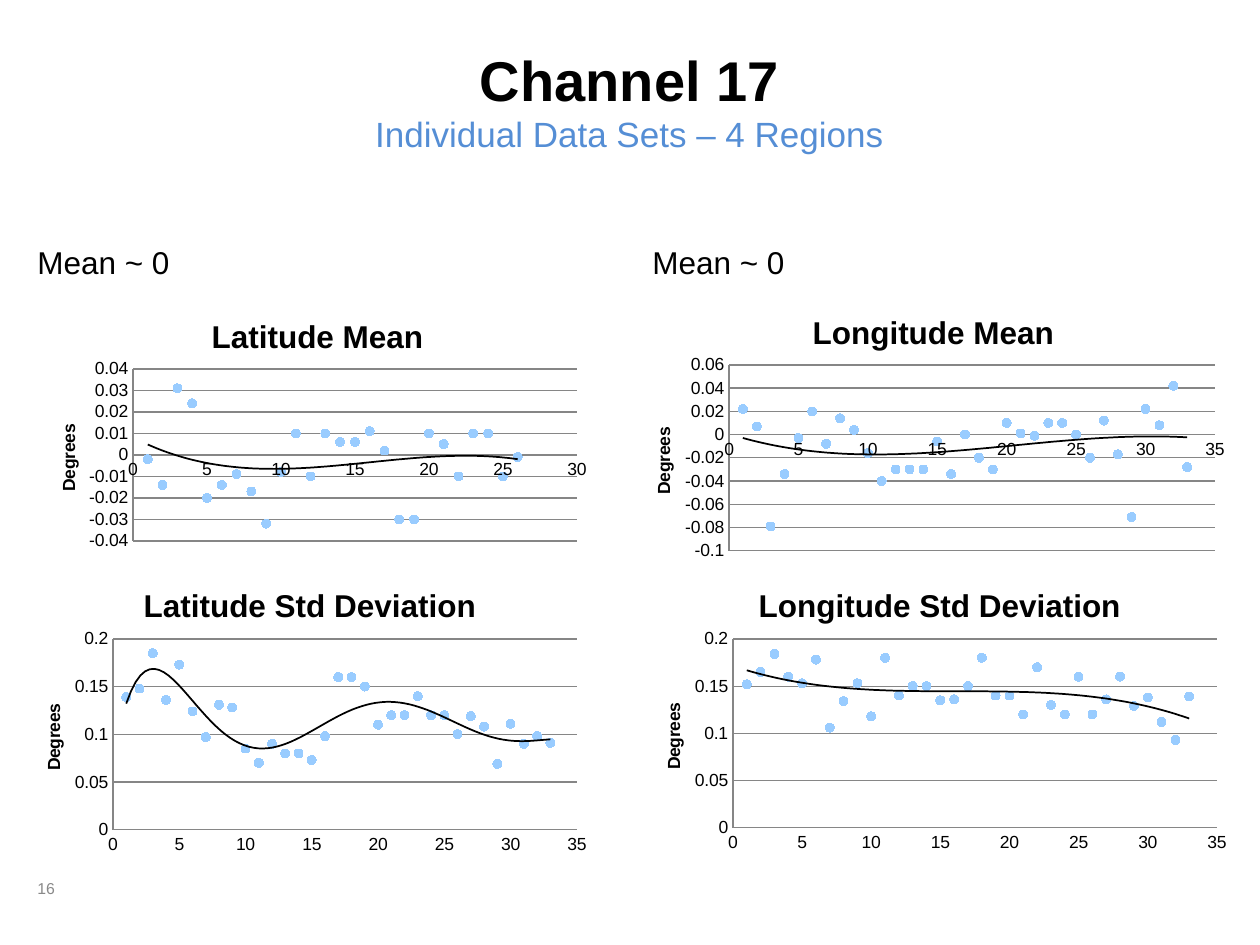
from pptx import Presentation
from pptx.chart.data import XyChartData
from pptx.dml.color import RGBColor
from pptx.enum.chart import XL_CHART_TYPE as ChartType, XL_MARKER_STYLE as Marker, XL_TICK_MARK as Tick
from pptx.enum.text import MSO_ANCHOR as Anchor, PP_ALIGN as Align
from pptx.oxml import parse_xml
from pptx.oxml.ns import nsdecls
from pptx.util import Emu, Pt

EMU_PER_INCH, PX_PER_INCH = 914400, 126
FONT = "Arial"
COLORS = {"black": "000000", "subtitle": "558ED5", "number": "898989",
          "marker": "99CCFF", "axis": "868686"}

# Each chart: box and plot as left, top, width, height in px; title as left, top;
# x and y scales as minimum, maximum, step; order of the polynomial trend
CHARTS = [
    dict(title="Latitude Mean", box=(25, 287, 573, 268), plot=(133, 369, 444, 172),
         title_at=(206, 310), x_scale=(0, 30, 5), y_scale=(-0.04, 0.04, 0.01), order=3,
         values=[-0.002, -0.014, 0.031, 0.024, -0.02, -0.014, -0.009, -0.017, -0.032,
                 -0.008, 0.01, -0.01, 0.01, 0.006, 0.006, 0.011, 0.002, -0.03, -0.03,
                 0.01, 0.005, -0.01, 0.01, 0.01, -0.01, -0.001]),
    dict(title="Latitude Std Deviation", box=(10, 557, 588, 305), plot=(113, 639, 464, 191),
         title_at=(138, 579), x_scale=(0, 35, 5), y_scale=(0, 0.2, 0.05), order=6,
         values=[0.139, 0.148, 0.185, 0.136, 0.173, 0.124, 0.097, 0.131, 0.128, 0.085,
                 0.07, 0.09, 0.08, 0.08, 0.073, 0.098, 0.16, 0.16, 0.15, 0.11, 0.12,
                 0.12, 0.14, 0.12, 0.12, 0.1, 0.119, 0.108, 0.069, 0.111, 0.09, 0.098,
                 0.091]),
    dict(title="Longitude Mean", box=(620, 284, 617, 284), plot=(729, 365, 486, 186),
         title_at=(807, 306), x_scale=(0, 35, 5), y_scale=(-0.1, 0.06, 0.02), order=3,
         values=[0.022, 0.007, -0.079, -0.034, -0.003, 0.02, -0.008, 0.014, 0.004,
                 -0.016, -0.04, -0.03, -0.03, -0.03, -0.006, -0.034, 0, -0.02, -0.03,
                 0.01, 0.001, -0.001, 0.01, 0.01, 0, -0.02, 0.012, -0.017, -0.071,
                 0.022, 0.008, 0.042, -0.028]),
    dict(title="Longitude Std Deviation", box=(630, 557, 609, 302), plot=(733, 639, 484, 189),
         title_at=(753, 579), x_scale=(0, 35, 5), y_scale=(0, 0.2, 0.05), order=3,
         values=[0.152, 0.165, 0.184, 0.16, 0.153, 0.178, 0.106, 0.134, 0.153, 0.118,
                 0.18, 0.14, 0.15, 0.15, 0.135, 0.136, 0.15, 0.18, 0.14, 0.14, 0.12,
                 0.17, 0.13, 0.12, 0.16, 0.12, 0.136, 0.16, 0.129, 0.138, 0.112, 0.093,
                 0.139]),
]


def px(length):
    return Emu(round(length * EMU_PER_INCH / PX_PER_INCH))


def color(name):
    return RGBColor.from_string(COLORS[name])


def style_font(font, size, color_name="black", bold=False):
    font.name, font.size, font.bold = FONT, Pt(size), bold
    font.color.rgb = color(color_name)


def add_text(slide, box, text, anchor, styles, align=Align.LEFT):
    """Add one paragraph; styles holds the font settings of each line."""
    shape = slide.shapes.add_textbox(*map(px, box))
    frame = shape.text_frame
    frame.word_wrap = True
    frame.vertical_anchor = anchor
    frame.text = text
    paragraph = frame.paragraphs[0]
    paragraph.alignment = align
    for run, style in zip(paragraph.runs, styles):
        style_font(run.font, *style)


def set_layout(element, index, box, place, inner=False):
    """Place a title or plot area by fractions of the chart box."""
    for old in element.xpath("c:layout"):
        element.remove(old)
    left, top, width, height = box
    parts = [("x", (place[0] - left) / width), ("y", (place[1] - top) / height)]
    if inner:
        parts += [("w", place[2] / width), ("h", place[3] / height)]
    target = '<c:layoutTarget val="inner"/>' if inner else ""
    modes = "".join(f'<c:{name}Mode val="edge"/>' for name in "xy")
    sizes = "".join(f'<c:{name} val="{value:.4f}"/>' for name, value in parts)
    element.insert(index, parse_xml(
        f'<c:layout {nsdecls("c")}><c:manualLayout>{target}{modes}{sizes}'
        "</c:manualLayout></c:layout>"))


def set_title(title, text, size, box, place):
    title.text_frame.text = text
    style_font(title.text_frame.paragraphs[0].runs[0].font, size, bold=True)
    set_layout(title.element, 1, box, place)


def style_axis(axis, scale, gridlines):
    axis.minimum_scale, axis.maximum_scale, axis.major_unit = scale
    axis.major_tick_mark = axis.minor_tick_mark = Tick.NONE
    axis.has_major_gridlines = gridlines
    axis.tick_labels.number_format = "General"
    axis.tick_labels.number_format_is_linked = False
    lines = [axis.format.line]
    if gridlines:
        lines.append(axis.major_gridlines.format.line)
    for line in lines:
        line.color.rgb = color("axis")
        line.width = Pt(0.75)


def add_trendline(chart, order):
    x_values = chart.element.xpath(".//c:ser/c:xVal")[0]
    x_values.addprevious(parse_xml(
        f'<c:trendline {nsdecls("c", "a")}><c:spPr><a:ln w="12700"><a:solidFill>'
        f'<a:srgbClr val="{COLORS["black"]}"/></a:solidFill></a:ln></c:spPr>'
        f'<c:trendlineType val="poly"/><c:order val="{order}"/>'
        '<c:dispRSqr val="0"/><c:dispEq val="0"/></c:trendline>'))


def add_scatter(slide, title, box, plot, title_at, x_scale, y_scale, order, values):
    data = XyChartData()
    points = data.add_series("Series 1")
    for x, y in enumerate(values, start=1):
        points.add_data_point(x, y)
    chart = slide.shapes.add_chart(ChartType.XY_SCATTER, *map(px, box), data).chart
    style_font(chart.font, 10)
    chart.has_legend = False
    chart.has_title = True
    set_title(chart.chart_title, title, 18, box, title_at)

    # Axes and plot area
    style_axis(chart.category_axis, x_scale, gridlines=False)
    style_axis(chart.value_axis, y_scale, gridlines=True)
    plot_middle = plot[1] + plot[3] / 2
    set_title(chart.value_axis.axis_title, "Degrees", 10, box,
              (box[0] + 29, plot_middle - 34))
    set_layout(chart.element.xpath(".//c:plotArea")[0], 0, box, plot, inner=True)

    # Points and trend
    chart.plots[0].vary_by_categories = False
    series = chart.plots[0].series[0]
    series.format.line.fill.background()
    series.marker.style, series.marker.size = Marker.CIRCLE, 5
    series.marker.format.fill.solid()
    series.marker.format.fill.fore_color.rgb = color("marker")
    series.marker.format.line.color.rgb = color("marker")
    add_trendline(chart, order)


def main():
    presentation = Presentation()
    presentation.slide_width, presentation.slide_height = px(1260), px(945)
    slide = presentation.slides.add_slide(presentation.slide_layouts[6])

    # Headings
    add_text(slide, (23, 21, 1213, 158), "Channel 17\vIndividual Data Sets – 4 Regions",
             Anchor.MIDDLE, [(32, "black", True), (20, "subtitle")], Align.CENTER)
    for left in (25, 640):
        add_text(slide, (left, 199, 596, 88), "Mean ~ 0", Anchor.BOTTOM, [(18,)])

    # Charts
    for chart in CHARTS:
        add_scatter(slide, **chart)

    # Slide number
    add_text(slide, (25, 872, 84, 32), "16", Anchor.MIDDLE, [(9, "number")])
    presentation.save("out.pptx")


if __name__ == "__main__":
    main()
